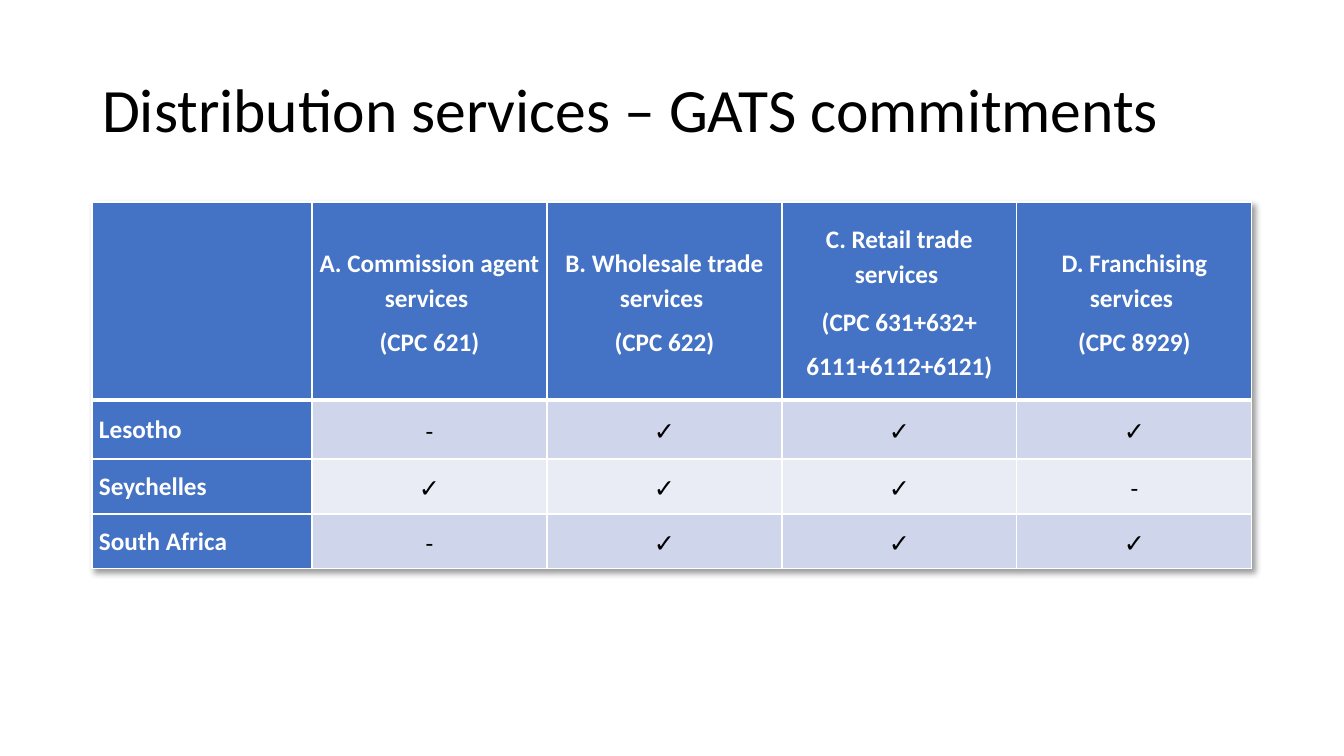
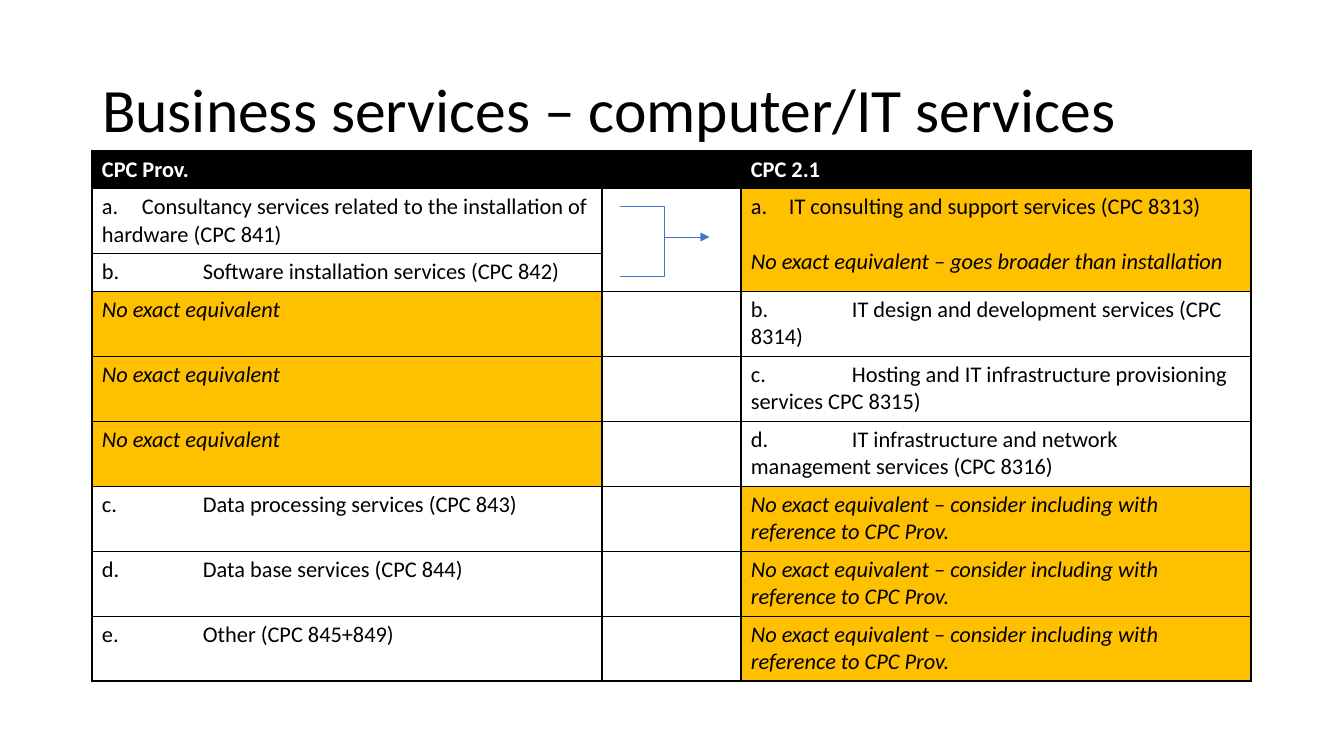
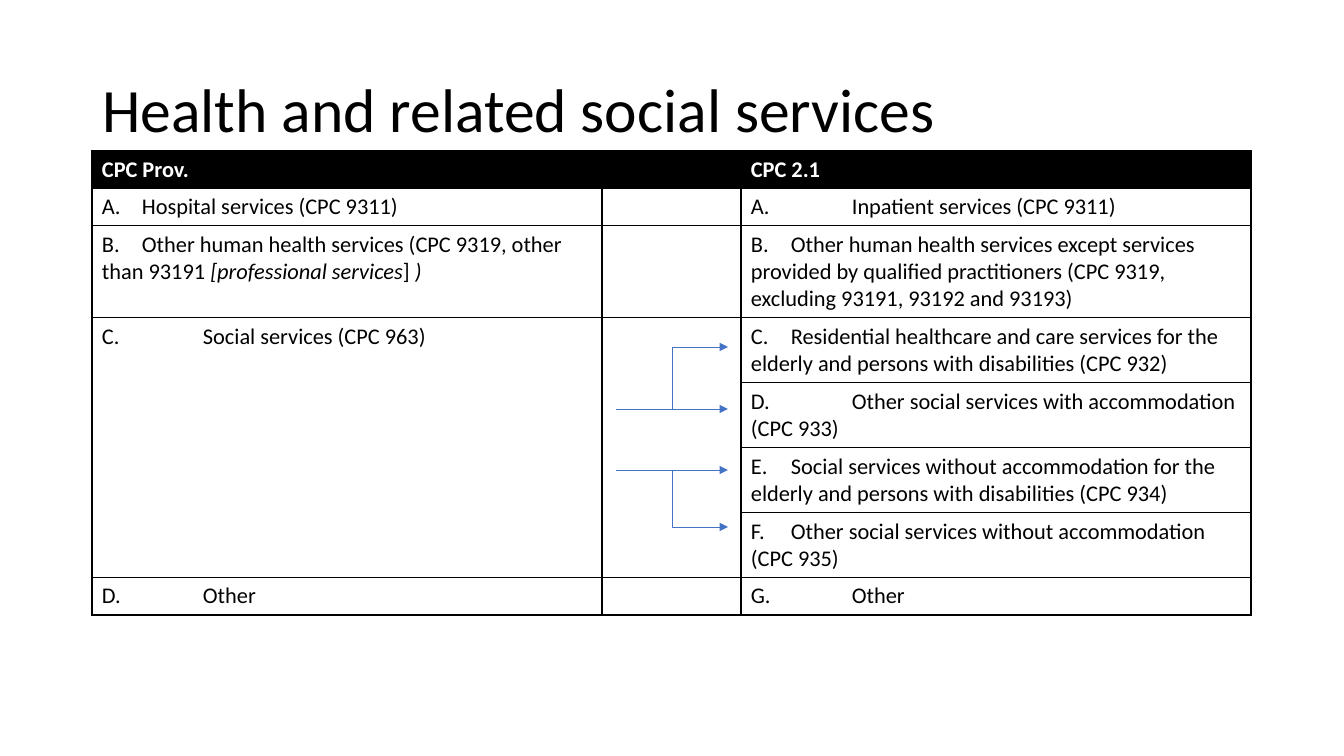
from lxml.etree import SubElement
from pptx import Presentation
from pptx.dml.color import RGBColor
from pptx.enum.shapes import MSO_CONNECTOR
from pptx.enum.text import MSO_ANCHOR, MSO_AUTO_SIZE, PP_ALIGN
from pptx.oxml import parse_xml
from pptx.oxml.ns import nsdecls, qn
from pptx.util import Emu, Pt

COLORS = {
    "black": "000000",
    "white": "FFFFFF",
    "blue": "4472C4",
    "band": "CFD5EA",
    "pale": "E9EBF5",
    "amber": "FFC000",
}
FONT = "Calibri"
LEFT, WIDTH = 92, 1159
NARROW_STOP, WIDE_STOP = 40, 101
TITLE_ONLY = 5


def px(length):
    """Turn pixels (1344 across the slide) into EMU."""
    return Emu(round(length * 914400 / 100.8))


def rgb(name):
    return RGBColor.from_string(COLORS[name])


def write(frame, text, size=16, color="black", bold=False, italic=False,
          align=PP_ALIGN.LEFT, line=None, before=0, after=0,
          stop=None, numbered=False):
    """Add a paragraph; text is a string or a list of (text, italic) spans."""
    para = frame.paragraphs[0]
    if para.runs:
        para = frame.add_paragraph()
    para.alignment = align
    para.line_spacing = line
    para.space_before, para.space_after = Pt(before), Pt(after)
    properties = para._p.get_or_add_pPr()
    if numbered:
        properties.set("marL", str(px(38)))
        properties.set("indent", str(-px(38)))
        SubElement(properties, qn("a:buAutoNum"), type="alphaLcPeriod")
    if stop:
        stops = SubElement(properties, qn("a:tabLst"))
        SubElement(stops, qn("a:tab"), pos=str(px(stop)), algn="l")
    for words, slanted in [(text, italic)] if isinstance(text, str) else text:
        span = para.add_run()
        span.text = words
        font = span.font
        font.name, font.size = FONT, Pt(size)
        font.bold, font.italic = bold, slanted
        font.color.rgb = rgb(color)


def cell_of(*paras, fill=None):
    return {"paras": paras, "fill": fill}


class Deck:
    """The shared style and the current page."""

    def __init__(self):
        self.file = Presentation()
        self.file.slide_width, self.file.slide_height = px(1344), px(756)
        self.page = None

    def add_page(self, title):
        self.page = self.file.slides.add_slide(self.file.slide_layouts[TITLE_ONLY])
        box = self.page.shapes.title
        box.left, box.top, box.width, box.height = map(px, (LEFT, 40, WIDTH, 146))
        frame = box.text_frame
        frame.auto_size = MSO_AUTO_SIZE.NONE
        frame.vertical_anchor = MSO_ANCHOR.MIDDLE
        write(frame, title, size=44, line=0.9)

    def add_table(self, top, widths, heights, rows, border, heavy=None,
                  margins=(10, 5), anchor=MSO_ANCHOR.TOP):
        """Draw rows of cell_of(); heavy is the row with a thick lower edge."""
        table = self.page.shapes.add_table(
            len(heights), len(widths), px(LEFT), px(top),
            px(sum(widths)), px(sum(heights))).table
        table.first_row = table.horz_banding = False
        for column, width in zip(table.columns, widths):
            column.width = px(width)
        for row, height in zip(table.rows, heights):
            row.height = px(height)
        for r, row in enumerate(rows):
            for c, content in enumerate(row):
                cell = table.cell(r, c)
                cell.margin_left = cell.margin_right = px(margins[0])
                cell.margin_top = cell.margin_bottom = px(margins[1])
                cell.vertical_anchor = anchor
                thick = {"L": 1, "R": 1, "T": 1, "B": 1}
                if heavy is not None and r in (heavy, heavy + 1):
                    thick["B" if r == heavy else "T"] = 3
                self.set_borders(cell, border, thick)
                if content["fill"]:
                    cell.fill.solid()
                    cell.fill.fore_color.rgb = rgb(content["fill"])
                else:
                    cell.fill.background()
                for para in content["paras"]:
                    write(cell.text_frame, **para)
                if not content["paras"]:
                    # Keep empty cells from stretching their row
                    SubElement(cell.text_frame.paragraphs[0]._p,
                               qn("a:endParaRPr"), sz="1600")
        return table

    def set_borders(self, cell, color, thick):
        properties = cell._tc.get_or_add_tcPr()
        for side, points in thick.items():
            edge = SubElement(properties, qn(f"a:ln{side}"), w=str(Pt(points)))
            fill = SubElement(edge, qn("a:solidFill"))
            SubElement(fill, qn("a:srgbClr"), val=COLORS[color])

    def add_shadow(self, table):
        table._tbl.tblPr.insert(0, parse_xml(
            f'<a:effectLst {nsdecls("a")}><a:outerShdw blurRad="50800" dist="38100" '
            'dir="2700000" algn="tl" rotWithShape="0"><a:srgbClr val="000000">'
            '<a:alpha val="40000"/></a:srgbClr></a:outerShdw></a:effectLst>'))

    def add_arrow(self, x1, y1, x2, y2):
        """Draw a straight arrow, or an elbow when the ends differ in height."""
        kind = MSO_CONNECTOR.STRAIGHT if y1 == y2 else MSO_CONNECTOR.ELBOW
        arrow = self.page.shapes.add_connector(kind, *map(px, (x1, y1, x2, y2)))
        arrow.line.color.rgb = rgb("blue")
        arrow.line.width = Pt(0.5)
        SubElement(arrow.line._get_or_add_ln(), qn("a:tailEnd"), type="triangle")
        SubElement(arrow._element.spPr, qn("a:effectLst"))

    def add_comparison(self, heights, pairs, merges):
        """Draw the two classifications side by side with a gap between."""
        heading = [cell_of(*[dict(text=text, color="white", bold=True)] if text else [],
                           fill="black") for text in ("CPC Prov.", "", "CPC 2.1")]
        rows = [heading] + [[left, BLANK, right] for left, right in pairs]
        table = self.add_table(151, (510, 139, 510), heights, rows, "black")
        for first, last, column in merges:
            table.cell(first, column).merge(table.cell(last, column))


BLANK = cell_of()


def entry(text, stop=WIDE_STOP):
    return cell_of(dict(text=text, stop=stop))


def near(text):
    return entry(text, NARROW_STOP)


def note(text):
    return cell_of(dict(text=text, italic=True), fill="amber")


def build_distribution(deck):
    deck.add_page("Distribution services – GATS commitments")
    centred = dict(size=18, align=PP_ALIGN.CENTER, line=1.15, before=3, after=3)
    label = dict(size=18, color="white", bold=True)
    heading = {**centred, **label}

    # Header row
    header = [cell_of(fill="blue")]
    for name, code in (("A. Commission agent services ", "(CPC 621)"),
                       ("B. Wholesale trade services ", "(CPC 622)"),
                       ("C. Retail trade services ", "(CPC 631+632+"),
                       ("D. Franchising services ", "(CPC 8929)")):
        split = code.endswith("+")
        style = {**heading, "after": 6 if split else 3}
        paras = [dict(style, text=text) for text in (name, code)]
        if split:
            paras.append(dict(heading, text="6111+6112+6121)", before=0))
        header.append(cell_of(*paras, fill="blue"))

    # Commitments of each country
    rows = [header]
    for number, (country, marks) in enumerate((("Lesotho", "-✓✓✓"),
                                               ("Seychelles", "✓✓✓-"),
                                               ("South Africa", "-✓✓✓"))):
        fill = "pale" if number % 2 else "band"
        rows.append([cell_of(dict(label, text=country, before=3, after=3), fill="blue")]
                    + [cell_of(dict(centred, text=mark), fill=fill) for mark in marks])
    table = deck.add_table(202, [220] + [235] * 4, (198, 59, 55, 55), rows, "white",
                           heavy=0, margins=(7, 0), anchor=MSO_ANCHOR.MIDDLE)
    deck.add_shadow(table)


def build_computer(deck):
    deck.add_page("Business services – computer/IT services")
    missing = note("No exact equivalent")
    consider = note("No exact equivalent – consider including with reference to CPC Prov.")
    consulting = cell_of(
        dict(text="IT consulting and support services (CPC 8313)", numbered=True),
        dict(text="No exact equivalent – goes broader than installation",
             italic=True, before=19.5),
        fill="amber")
    pairs = (
        (near("a.\tConsultancy services related to the installation of hardware (CPC 841)"),
         consulting),
        (entry("b.\tSoftware installation services (CPC 842)"), BLANK),
        (missing, entry("b.\tIT design and development services (CPC 8314)")),
        (missing, entry("c.\tHosting and IT infrastructure provisioning services CPC 8315)")),
        (missing, entry("d.\tIT infrastructure and network management services (CPC 8316)")),
        (entry("c.\tData processing services (CPC 843)"), consider),
        (entry("d.\tData base services (CPC 844)"), consider),
        (entry("e.\tOther (CPC 845+849)"), consider),
    )
    deck.add_comparison([37, 65, 38] + [65] * 6, pairs, ((1, 2, 1), (1, 2, 2)))
    # Two services lead to one
    for start in (206, 276):
        deck.add_arrow(620, start, 709, 237)


def build_health(deck):
    deck.add_page("Health and related social services")
    other_health = near([
        ("B.\tOther human health services (CPC 9319, other than 93191 ", False),
        ("[professional services", True), ("] ", False), (")", True)])
    pairs = (
        (near("A.\tHospital services (CPC 9311)"),
         entry("A.\tInpatient services (CPC 9311)")),
        (other_health,
         near("B.\tOther human health services except services provided by qualified "
              "practitioners (CPC 9319, excluding 93191, 93192 and 93193)")),
        (entry("C.\tSocial services (CPC 963)"),
         near("C.\tResidential healthcare and care services for the elderly and "
              "persons with disabilities (CPC 932)")),
        (BLANK, entry("D.\tOther social services with accommodation (CPC 933)")),
        (BLANK, near("E.\tSocial services without accommodation for the elderly and "
                     "persons with disabilities (CPC 934)")),
        (BLANK, near("F.\tOther social services without accommodation (CPC 935)")),
        (entry("D.\tOther"), entry("G.\tOther")),
    )
    deck.add_comparison([37, 37, 92] + [65] * 4 + [37], pairs, ((3, 6, 0), (3, 6, 1)))
    # One service splits into four
    for start, branch in ((470, 527), (409, 347)):
        for end in (branch, start):
            deck.add_arrow(616, start, 728, end)


def main():
    deck = Deck()
    build_distribution(deck)
    build_computer(deck)
    build_health(deck)
    deck.file.save("out.pptx")


if __name__ == "__main__":
    main()
